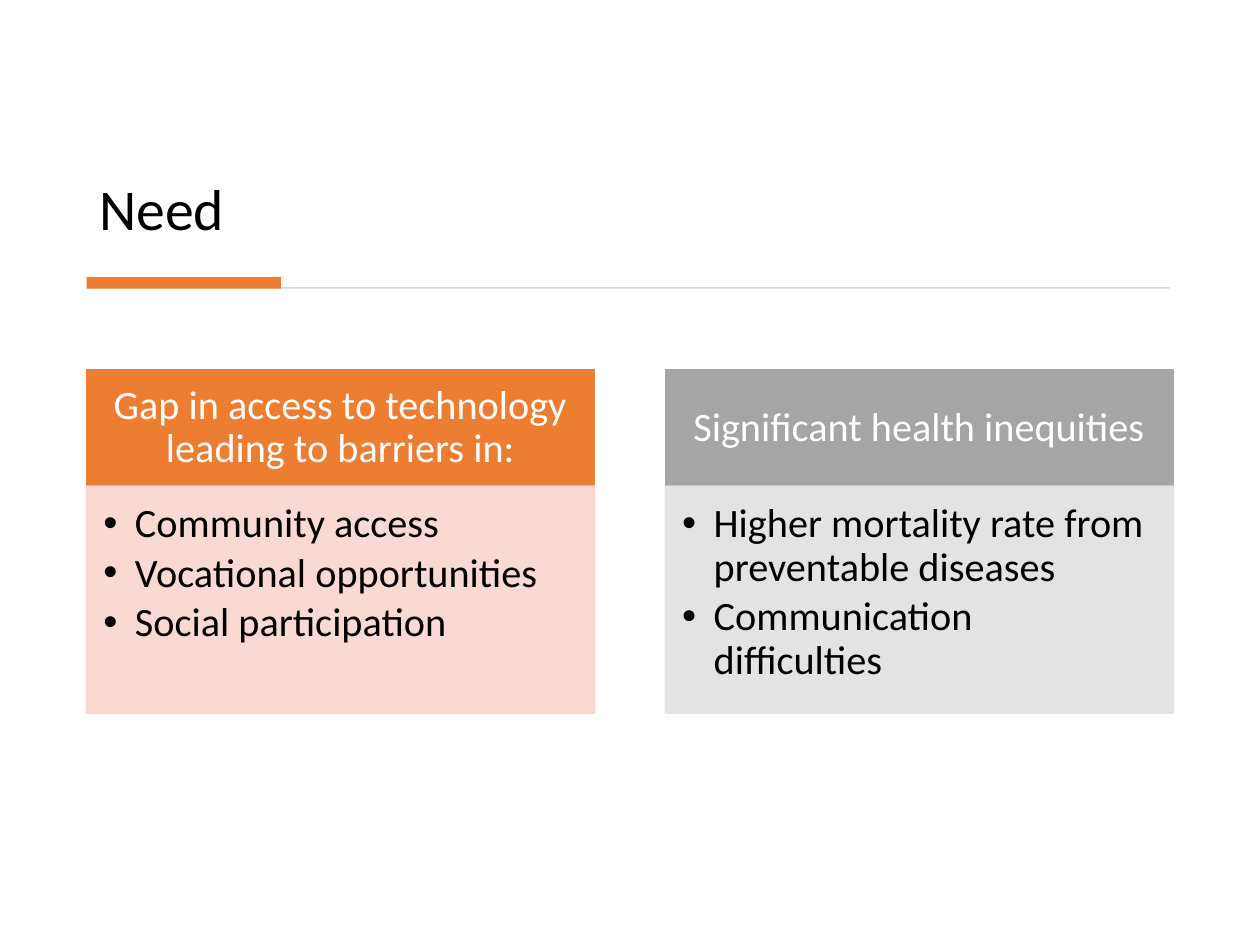
from lxml.etree import SubElement
from pptx import Presentation
from pptx.dml.color import RGBColor
from pptx.enum.shapes import MSO_SHAPE
from pptx.enum.text import MSO_ANCHOR, MSO_AUTO_SIZE, PP_ALIGN
from pptx.oxml.ns import qn
from pptx.util import Pt

TITLE = "Need"
CARDS = [
    ("Gap in access to technology leading to barriers in:",
     ["Community access", "Vocational opportunities", "Social participation"],
     "orange", "peach"),
    ("Significant health inequities",
     ["Higher mortality rate from preventable diseases",
      "Communication difficulties"],
     "gray", "pale"),
]
COLORS = {"orange": "ED7D31", "peach": "F8D7CE", "gray": "A5A5A5",
          "pale": "E1E1E1", "rule": "D5D5D5", "black": "000000",
          "white": "FFFFFF"}

LEFT, WIDTH, GAP = 49.5, 621, 40.4
TOP, HEAD, BODY = 211.5, 66.3, 129.6
CARD = (WIDTH - GAP) / 2
INDENT = 18

TITLE_STYLE = {"size": 33, "color": "black", "align": PP_ALIGN.LEFT,
               "anchor": MSO_ANCHOR.BOTTOM, "inset": (7.2, 3.6, 7.2, 3.6)}
HEAD_STYLE = {"size": 23, "color": "white", "align": PP_ALIGN.CENTER,
              "anchor": MSO_ANCHOR.MIDDLE, "inset": (12.9, 7.3, 12.9, 7.3)}
BODY_STYLE = {"size": 23, "color": "black", "align": PP_ALIGN.LEFT,
              "anchor": MSO_ANCHOR.TOP, "inset": (9.6, 9.6, 12.9, 14.5),
              "after": 3.4, "bullet": "•"}


def rgb(name):
    return RGBColor.from_string(COLORS[name])


def place(shape, *box):
    for key, value in zip(("left", "top", "width", "height"), box):
        setattr(shape, key, Pt(value))


def paint(shape, name, alpha=None):
    """Fill and outline a shape in one colour, with alpha in percent."""
    shape.fill.solid()
    shape.fill.fore_color.rgb = rgb(name)
    shape.line.color.rgb = rgb(name)
    shape.line.width = Pt(1)
    if alpha:
        for color in shape.element.spPr.iter(qn("a:srgbClr")):
            SubElement(color, qn("a:alpha"), val=str(alpha * 1000))


def add_bullet(para, char):
    props = para._p.get_or_add_pPr()
    props.set("marL", str(Pt(INDENT)))
    props.set("indent", str(-Pt(INDENT)))
    SubElement(props, qn("a:buFont"), typeface="Arial")
    SubElement(props, qn("a:buChar"), char=char)


def write(shape, lines, style):
    frame = shape.text_frame
    frame.text = "\n".join(lines)
    sides = ("margin_left", "margin_top", "margin_right", "margin_bottom")
    layout = {"word_wrap": True, "auto_size": MSO_AUTO_SIZE.NONE,
              "vertical_anchor": style["anchor"]}
    layout.update(zip(sides, map(Pt, style["inset"])))
    for key, value in layout.items():
        setattr(frame, key, value)
    format = {"alignment": style["align"], "line_spacing": 0.9,
              "space_before": Pt(0), "space_after": Pt(style.get("after", 0))}
    face = {"name": "Calibri", "size": Pt(style["size"]), "bold": False}
    for para in frame.paragraphs:
        if "bullet" in style:
            add_bullet(para, style["bullet"])
        for key, value in format.items():
            setattr(para, key, value)
        for key, value in face.items():
            setattr(para.font, key, value)
        para.font.color.rgb = rgb(style["color"])


def add_bar(slide, name, *box):
    bar = slide.shapes.add_shape(MSO_SHAPE.RECTANGLE, *map(Pt, box))
    bar.shadow.inherit = False
    bar.fill.solid()
    bar.fill.fore_color.rgb = rgb(name)
    bar.line.fill.background()


def main():
    deck = Presentation()
    deck.slide_width, deck.slide_height = Pt(720), Pt(540)
    slide = deck.slides.add_slide(deck.slide_layouts.get_by_name("Comparison"))
    title, *slots = list(slide.placeholders)[:5]

    place(title, LEFT, 82.8, WIDTH, 59.8)
    write(title, [TITLE], TITLE_STYLE)
    add_bar(slide, "rule", 51.4, 164, 617, 1)
    add_bar(slide, "orange", LEFT, 158.4, 111, 6.5)

    pairs = zip(slots[::2], slots[1::2])
    for col, (card, (head, body)) in enumerate(zip(CARDS, pairs)):
        label, items, dark, light = card
        left = LEFT + col * (CARD + GAP)
        place(head, left, TOP, CARD, HEAD)
        paint(head, dark)
        write(head, [label], HEAD_STYLE)
        place(body, left, TOP + HEAD, CARD, BODY)
        paint(body, light, 90)
        write(body, items, BODY_STYLE)

    deck.save("out.pptx")


if __name__ == "__main__":
    main()
